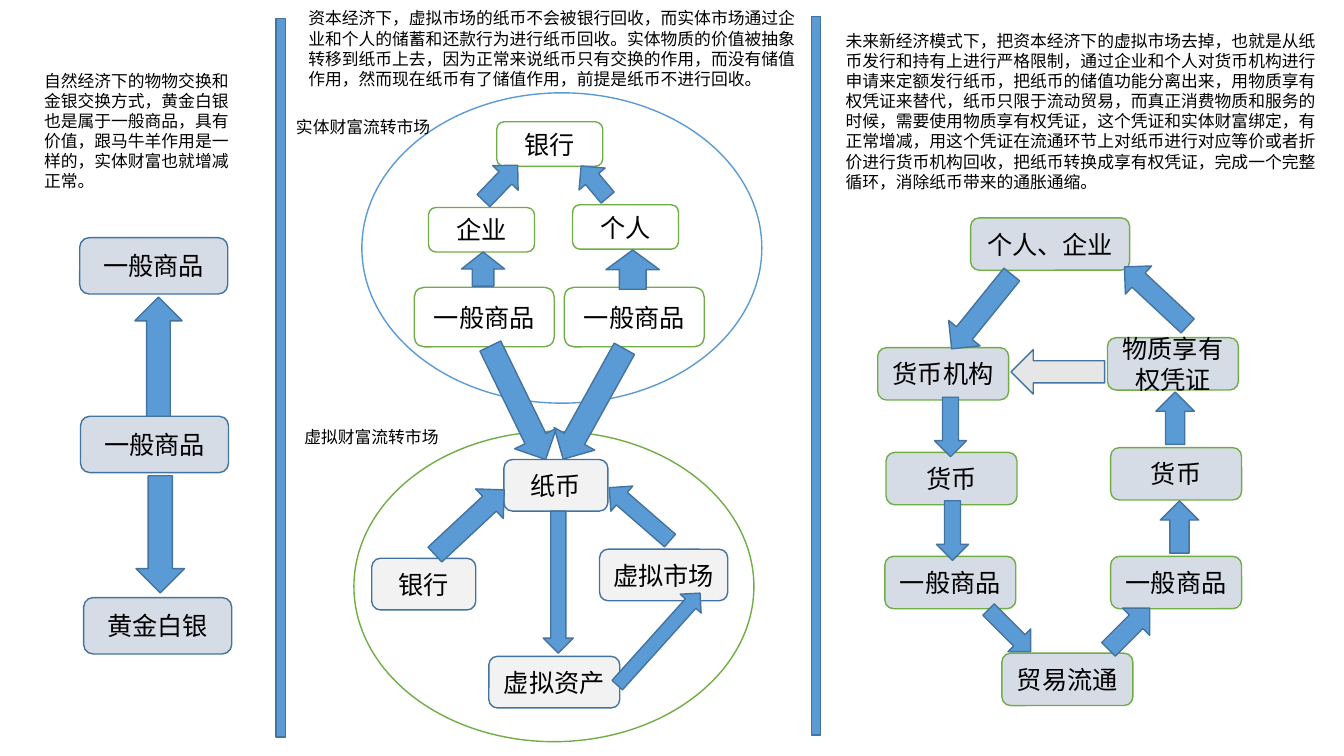
from dataclasses import dataclass

from pptx import Presentation
from pptx import util as u
from pptx.dml.color import RGBColor
from pptx.enum import shapes, text

Preset = shapes.MSO_SHAPE
UP, DOWN = Preset.UP_ARROW, Preset.DOWN_ARROW
LEFT, RIGHT = Preset.LEFT_ARROW, Preset.RIGHT_ARROW


@dataclass(frozen=True)
class Theme:
    font: str = "Calibri"
    node_size: int = 18
    note_size: int = 12
    line_width: int = 1
    ink: str = "000000"
    white: str = "FFFFFF"
    blue: str = "5B9BD5"
    navy: str = "43739E"
    green: str = "70AD47"
    mist: str = "D6DCE5"
    pale: str = "F2F2F2"
    grey: str = "E7E6E6"


class Diagram:
    def __init__(self, slide, theme):
        self.slide = slide
        self.theme = theme

    def outline(self, preset, box, fill, line, rotation=0):
        shape = self.slide.shapes.add_shape(preset, *map(u.Cm, box))
        shape.shadow.inherit = False
        shape.fill.solid()
        shape.fill.fore_color.rgb = RGBColor.from_string(fill)
        shape.line.color.rgb = RGBColor.from_string(line)
        shape.line.width = u.Pt(self.theme.line_width)
        shape.rotation = rotation
        return shape

    def set_wording(self, frame, wording, size, align):
        frame.word_wrap = True
        paragraph = frame.paragraphs[0]
        paragraph.text = wording
        paragraph.alignment = align
        paragraph.font.name = self.theme.font
        paragraph.font.size = u.Pt(size)
        paragraph.font.color.rgb = RGBColor.from_string(self.theme.ink)

    def node(self, wording, box, fill, line):
        frame = self.outline(Preset.ROUNDED_RECTANGLE, box, fill, line).text_frame
        frame.vertical_anchor = text.MSO_ANCHOR.MIDDLE
        self.set_wording(frame, wording, self.theme.node_size, text.PP_ALIGN.CENTER)

    def arrow(self, preset, box, rotation=0, fill=None):
        self.outline(preset, box, fill or self.theme.blue, self.theme.navy, rotation)

    def divider(self, left, top):
        self.outline(Preset.RECTANGLE, (left, top, 0.23, 18.11),
                     self.theme.blue, self.theme.navy)

    def market(self, left, top, line):
        self.outline(Preset.OVAL, (left, top, 10.08, 7.82), self.theme.white, line)

    def note(self, wording, box):
        frame = self.slide.shapes.add_textbox(*map(u.Cm, box)).text_frame
        frame.auto_size = text.MSO_AUTO_SIZE.SHAPE_TO_FIT_TEXT
        self.set_wording(frame, wording, self.theme.note_size, text.PP_ALIGN.LEFT)


def natural_economy(diagram):
    theme = diagram.theme
    for goods, left, top in (
        ("黄金白银", 2.11, 15.06),
        ("一般商品", 2.01, 5.99),
        ("一般商品", 2.03, 10.49),
    ):
        diagram.node(goods, (left, top, 3.73, 1.42), theme.mist, theme.navy)
    diagram.arrow(UP, (3.4, 7.49, 1.19, 3))
    diagram.arrow(DOWN, (3.43, 11.99, 1.22, 2.95))
    diagram.note(
        "自然经济下的物物交换和金银交换方式，黄金白银也是属于一般商品，具有价值，"
        "跟马牛羊作用是一样的，实体财富也就增减正常。",
        (0.86, 1.65, 5.33, 3.33))


def virtual_market(diagram):
    theme = diagram.theme
    diagram.market(8.92, 10.87, theme.green)
    for holder, left, top, width in (
        ("银行", 9.37, 14.07, 2.62),
        ("纸币", 12.7, 11.58, 2.62),
        ("虚拟资产", 12.32, 16.54, 3.3),
        ("虚拟市场", 15.11, 13.84, 3.23),
    ):
        diagram.node(holder, (left, top, width, 1.3), theme.pale, theme.navy)
    for flow in (
        (RIGHT, (10.64, 12.65, 2.39, 1.02), 317),
        (DOWN, (13.69, 12.88, 0.76, 3.58)),
        (RIGHT, (15.04, 15.75, 3.12, 0.71), 312),
        (UP, (15.7, 11.94, 0.84, 2.03), 311),
    ):
        diagram.arrow(*flow)


def real_market(diagram):
    theme = diagram.theme
    diagram.market(9.12, 2.34, theme.blue)
    for left in (10.44, 14.22):
        diagram.node("一般商品", (left, 7.24, 3.53, 1.5), theme.white, theme.green)
    diagram.arrow(DOWN, (14.38, 8.59, 1.17, 3.18), 29)
    diagram.arrow(DOWN, (12.47, 8.56, 1.17, 3.18), 334)
    for holder, left, top in (
        ("企业", 10.8, 5.23),
        ("个人", 14.43, 5.16),
        ("银行", 12.52, 3.07),
    ):
        diagram.node(holder, (left, top, 2.67, 1.12), theme.white, theme.green)
    for flow in (
        (UP, (11.63, 6.35, 1.09, 0.86)),
        (DOWN, (15.27, 6.3, 1.35, 0.99), 180),
        (UP, (12.17, 3.99, 0.89, 1.24), 44),
        (UP, (14.55, 4.06, 0.86, 1.04), 320),
    ):
        diagram.arrow(*flow)


def capital_notes(diagram):
    diagram.note("实体财富流转市场", (7.21, 2.82, 3.89, 1.3))
    diagram.note("虚拟财富流转市场", (7.42, 10.64, 3.89, 1.3))
    diagram.note(
        "资本经济下，虚拟市场的纸币不会被银行回收，而实体市场通过企业和个人的储蓄和还款行为"
        "进行纸币回收。实体物质的价值被抽象转移到纸币上去，因为正常来说纸币只有交换的作用，"
        "而没有储值作用，然而现在纸币有了储值作用，前提是纸币不进行回收。",
        (7.52, 0.08, 12.88, 2.31))


def future_economy(diagram):
    theme = diagram.theme
    for stage, left, top, width in (
        ("货币机构", 22.12, 8.76, 3.3),
        ("个人、企业", 24.46, 5.49, 4.01),
        ("货币", 22.33, 11.4, 3.3),
        ("一般商品", 22.3, 14.02, 3.3),
        ("一般商品", 27.99, 14.02, 3.3),
        ("贸易流通", 25.25, 16.46, 3.3),
        ("货币", 27.99, 11.28, 3.3),
        ("物质享有权凭证", 27.91, 8.51, 3.3),
    ):
        diagram.node(stage, (left, top, width, 1.32), theme.mist, theme.green)
    for flow in (
        (DOWN, (24.23, 6.65, 1.02, 2.41), 39),
        (DOWN, (23.55, 10.01, 0.81, 1.5)),
        (DOWN, (23.6, 12.62, 0.81, 1.5)),
        (DOWN, (25.04, 15.14, 0.81, 1.5), 315),
        (UP, (27.97, 15.11, 0.97, 1.47), 45),
        (UP, (29.24, 12.62, 0.97, 1.32)),
        (UP, (29.13, 9.88, 0.97, 1.32)),
        (LEFT, (25.48, 8.81, 2.36, 1.12), 0, theme.grey),
        (UP, (28.65, 6.38, 0.97, 2.18), 313),
    ):
        diagram.arrow(*flow)
    diagram.note(
        "未来新经济模式下，把资本经济下的虚拟市场去掉，也就是从纸币发行和持有上进行严格限制，"
        "通过企业和个人对货币机构进行申请来定额发行纸币，把纸币的储值功能分离出来，"
        "用物质享有权凭证来替代，纸币只限于流动贸易，而真正消费物质和服务的时候，"
        "需要使用物质享有权凭证，这个凭证和实体财富绑定，有正常增减，"
        "用这个凭证在流通环节上对纸币进行对应等价或者折价进行货币机构回收，"
        "把纸币转换成享有权凭证，完成一个完整循环，消除纸币带来的通胀通缩。",
        (21.06, 0.64, 12.47, 4.34))


def main():
    deck = Presentation()
    deck.slide_width, deck.slide_height = u.Cm(33.87), u.Cm(19.05)
    diagram = Diagram(deck.slides.add_slide(deck.slide_layouts[6]), Theme())
    natural_economy(diagram)
    diagram.divider(6.96, 0.46)
    virtual_market(diagram)
    real_market(diagram)
    diagram.divider(20.45, 0.41)
    capital_notes(diagram)
    future_economy(diagram)
    deck.save("out.pptx")


if __name__ == "__main__":
    main()
